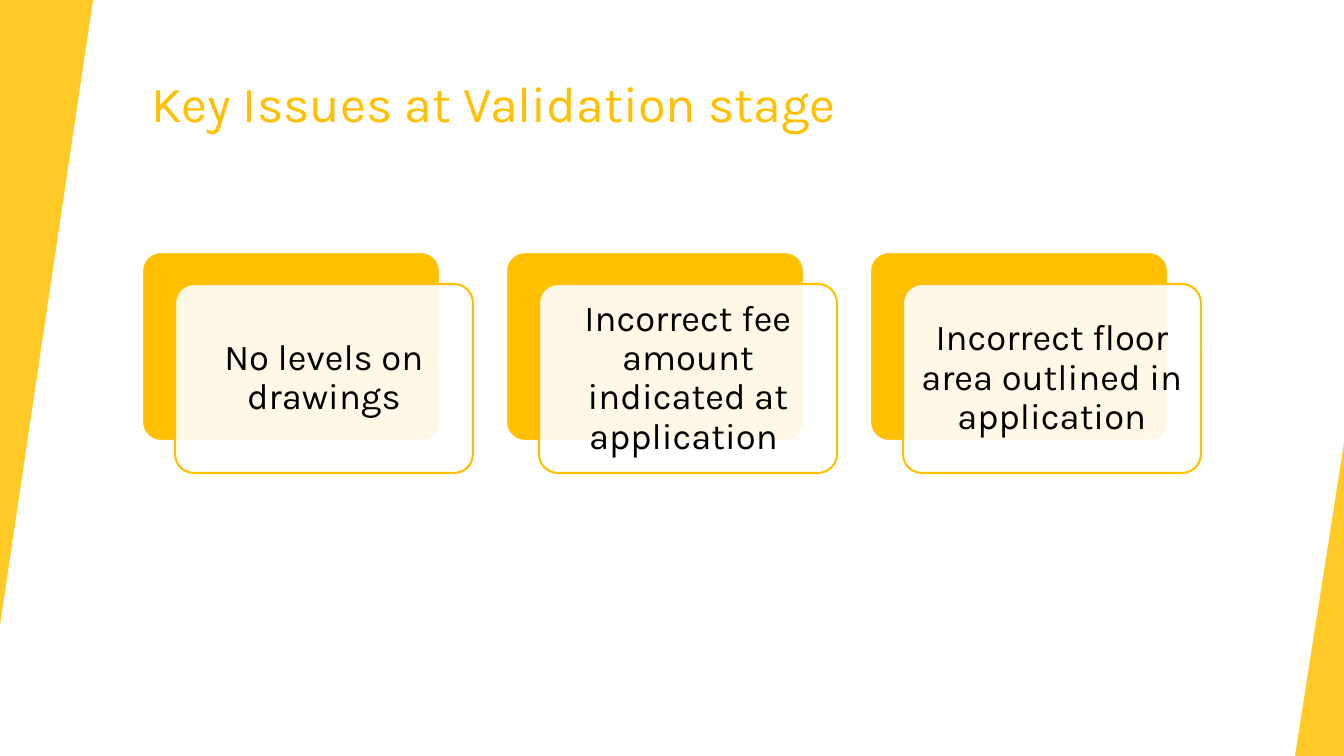
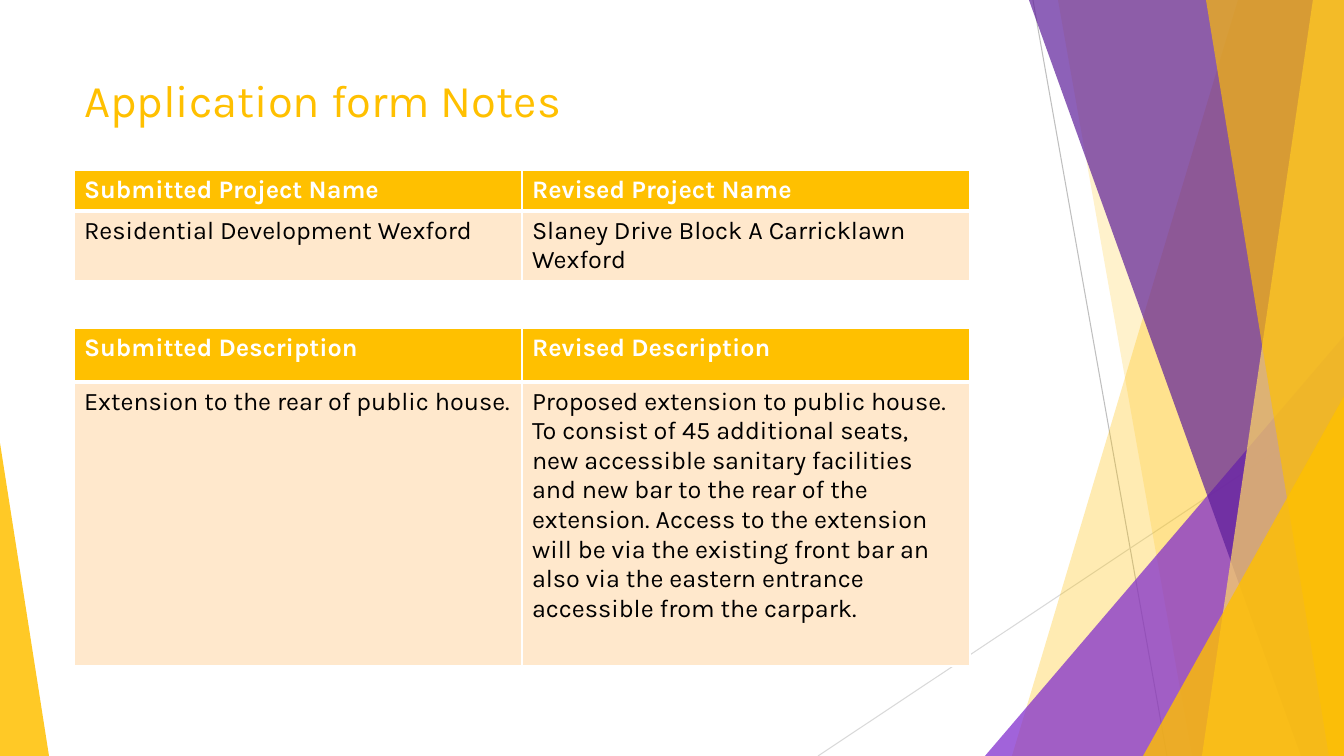
"""Build two slides on planning applications: validation issues and form notes."""
from lxml.etree import SubElement
from pptx import Presentation
from pptx.dml.color import RGBColor
from pptx.enum.shapes import MSO_CONNECTOR, MSO_SHAPE
from pptx.enum.text import MSO_ANCHOR, MSO_AUTO_SIZE, PP_ALIGN
from pptx.oxml.ns import qn
from pptx.util import Pt

EMU_PER_PX = 914400 / 100.8
WIDTH, HEIGHT = 1344, 756
FONT = "Karla"
COLORS = {
    "gold": "FFC000",
    "pale gold": "FFD966",
    "cream": "FFE8CC",
    "violet": "7D28CD",
    "plum": "5E1E9A",
    "grey": "BFBFBF",
    "light grey": "D9D9D9",
    "white": "FFFFFF",
    "black": "000000",
}
ISSUES = [
    "No levels on drawings",
    "Incorrect fee amount indicated at application ",
    "Incorrect floor area outlined in application",
]
NAMES = [
    ("Submitted Project Name", "Revised Project Name"),
    ("Residential Development Wexford", "Slaney Drive Block A Carricklawn Wexford"),
]
DESCRIPTIONS = [
    ("Submitted Description", "Revised Description"),
    (
        "Extension to the rear of public house.",
        "Proposed extension to public house. To consist of 45 additional seats, "
        "new accessible sanitary facilities and new bar to the rear of the extension. "
        "Access to the extension will be via the existing front bar an also via "
        "the eastern entrance accessible from the carpark.",
    ),
]


def px(length):
    return round(length * EMU_PER_PX)


def box(*lengths):
    return [px(length) for length in lengths]


def rgb(color):
    return RGBColor.from_string(COLORS[color])


def paint(shape, color, opacity=100, outline=None):
    shape.shadow.inherit = False
    shape.fill.solid()
    shape.fill.fore_color.rgb = rgb(color)
    if opacity < 100:
        tint = shape.fill._xPr.find(qn("a:solidFill"))[0]
        SubElement(tint, qn("a:alpha")).set("val", str(opacity * 1000))
    if outline:
        shape.line.color.rgb = rgb(outline)
        shape.line.width = Pt(1.5)
    else:
        shape.line.fill.background()


def style(paragraph, size, color, bold=False):
    font = paragraph.font
    font.name, font.size, font.bold = FONT, Pt(size), bold
    font.color.rgb = rgb(color)


def add_title_slide(deck, text, place, size):
    slide = deck.slides.add_slide(deck.slide_layouts[5])
    title = slide.shapes.title
    title.left, title.top, title.width, title.height = box(*place)
    frame = title.text_frame
    frame.text = text
    frame.auto_size = MSO_AUTO_SIZE.NONE
    frame.vertical_anchor = MSO_ANCHOR.TOP
    frame.paragraphs[0].alignment = PP_ALIGN.LEFT
    style(frame.paragraphs[0], size, "gold")
    return slide


def add_backdrop(slide):
    backdrop = slide.shapes.add_shape(MSO_SHAPE.RECTANGLE, *box(0, 0, WIDTH, HEIGHT))
    paint(backdrop, "white")
    slide.shapes._spTree.insert(2, backdrop._element)


def add_wedge(slide, place, color, opacity, apex=1, rotation=0):
    wedge = slide.shapes.add_shape(MSO_SHAPE.ISOSCELES_TRIANGLE, *box(*place))
    wedge.adjustments[0] = apex
    wedge.rotation = rotation
    paint(wedge, color, opacity)


def add_facet(slide, top_x, bottom_x, color, opacity):
    outline = slide.shapes.build_freeform(top_x, 0, scale=EMU_PER_PX)
    outline.add_line_segments([(WIDTH, 0), (WIDTH, HEIGHT), (bottom_x, HEIGHT)])
    paint(outline.convert_to_shape(), color, opacity)


def add_hairline(slide, ends, color):
    hairline = slide.shapes.add_connector(MSO_CONNECTOR.STRAIGHT, *box(*ends))
    hairline.line.color.rgb = rgb(color)
    hairline.line.width = Pt(0.75)
    SubElement(hairline._element.spPr, qn("a:effectLst"))


def add_facets(slide):
    add_hairline(slide, (1033, 0, 1167, HEIGHT), "grey")
    add_hairline(slide, (WIDTH, 406, 818, HEIGHT), "light grey")
    add_facet(slide, 1238, 1012, "gold", 30)
    add_facet(slide, 1058, 1192, "gold", 20)
    add_wedge(slide, (985, 336, 359, 420), "violet", 72)
    add_facet(slide, 1029, 1301, "plum", 70)
    add_facet(slide, 1313, 1202, "pale gold", 70)
    add_facet(slide, 1206, 1329, "gold", 65)
    add_wedge(slide, (1143, 396, 201, 360), "gold", 80)
    add_wedge(slide, (0, 443, 49, 313), "gold", 85, apex=0)


def move_to_master(slide, master):
    decoration = [shape for shape in slide.shapes if not shape.is_placeholder]
    for number, shape in enumerate(decoration, 101):
        shape._element._nvXxPr.cNvPr.set("id", str(number))
        master.shapes._spTree.append(shape._element)


def add_panel(slide, left, top, color, opacity, outline):
    panel = slide.shapes.add_shape(
        MSO_SHAPE.ROUNDED_RECTANGLE, *box(left, top, 298, 189))
    panel.adjustments[0] = 0.1
    paint(panel, color, opacity, outline)
    return panel


def add_card(slide, left, top, text):
    add_panel(slide, left, top, "gold", 100, "white")
    front = add_panel(slide, left + 33, top + 32, "white", 90, "gold")
    frame = front.text_frame
    frame.text = text
    frame.word_wrap = True
    frame.vertical_anchor = MSO_ANCHOR.MIDDLE
    frame.margin_left = frame.margin_right = px(10)
    frame.margin_top = frame.margin_bottom = px(10)
    issue = frame.paragraphs[0]
    issue.alignment = PP_ALIGN.CENTER
    issue.line_spacing = 0.9
    style(issue, 26, "black")


def add_borders(cell, top, bottom):
    properties = cell._tc.get_or_add_tcPr()
    for side, points in (("L", 1), ("R", 1), ("T", top), ("B", bottom)):
        border = SubElement(properties, qn(f"a:ln{side}"), w=str(Pt(points)))
        ink = SubElement(border, qn("a:solidFill"))
        SubElement(ink, qn("a:srgbClr"), val=COLORS["white"])


def add_comparison(slide, top, heights, rows):
    grid = slide.shapes.add_table(
        len(rows), 2, *box(74, top, 896, sum(heights))).table
    for index, (height, texts) in enumerate(zip(heights, rows)):
        heading = index == 0
        grid.rows[index].height = px(height)
        for column, text in enumerate(texts):
            cell = grid.cell(index, column)
            cell.text = text
            add_borders(cell, 1 if heading else 3, 3 if heading else 1)
            cell.fill.solid()
            cell.fill.fore_color.rgb = rgb("gold" if heading else "cream")
            style(cell.text_frame.paragraphs[0], 18,
                  "white" if heading else "black", heading)


def build_issues(deck):
    slide = add_title_slide(
        deck, "Key Issues at Validation stage", (141, 67, 1124, 121), 36)
    add_backdrop(slide)
    add_wedge(slide, (0, 0, 93, 625), "gold", 85, rotation=180)
    add_wedge(slide, (1295, 443, 49, 313), "gold", 85)
    for index, issue in enumerate(ISSUES):
        add_card(slide, 142 + 364 * index, 252, issue)


def build_notes(deck):
    slide = add_title_slide(
        deck, "Application form Notes", (74, 67, 948, 71), 32.4)
    add_facets(slide)
    move_to_master(slide, deck.slide_master)
    add_comparison(slide, 328, (54, 284), DESCRIPTIONS)
    add_comparison(slide, 170, (41, 69), NAMES)


def main():
    deck = Presentation()
    deck.slide_width, deck.slide_height = box(WIDTH, HEIGHT)
    build_issues(deck)
    build_notes(deck)
    deck.save("out.pptx")


if __name__ == "__main__":
    main()
